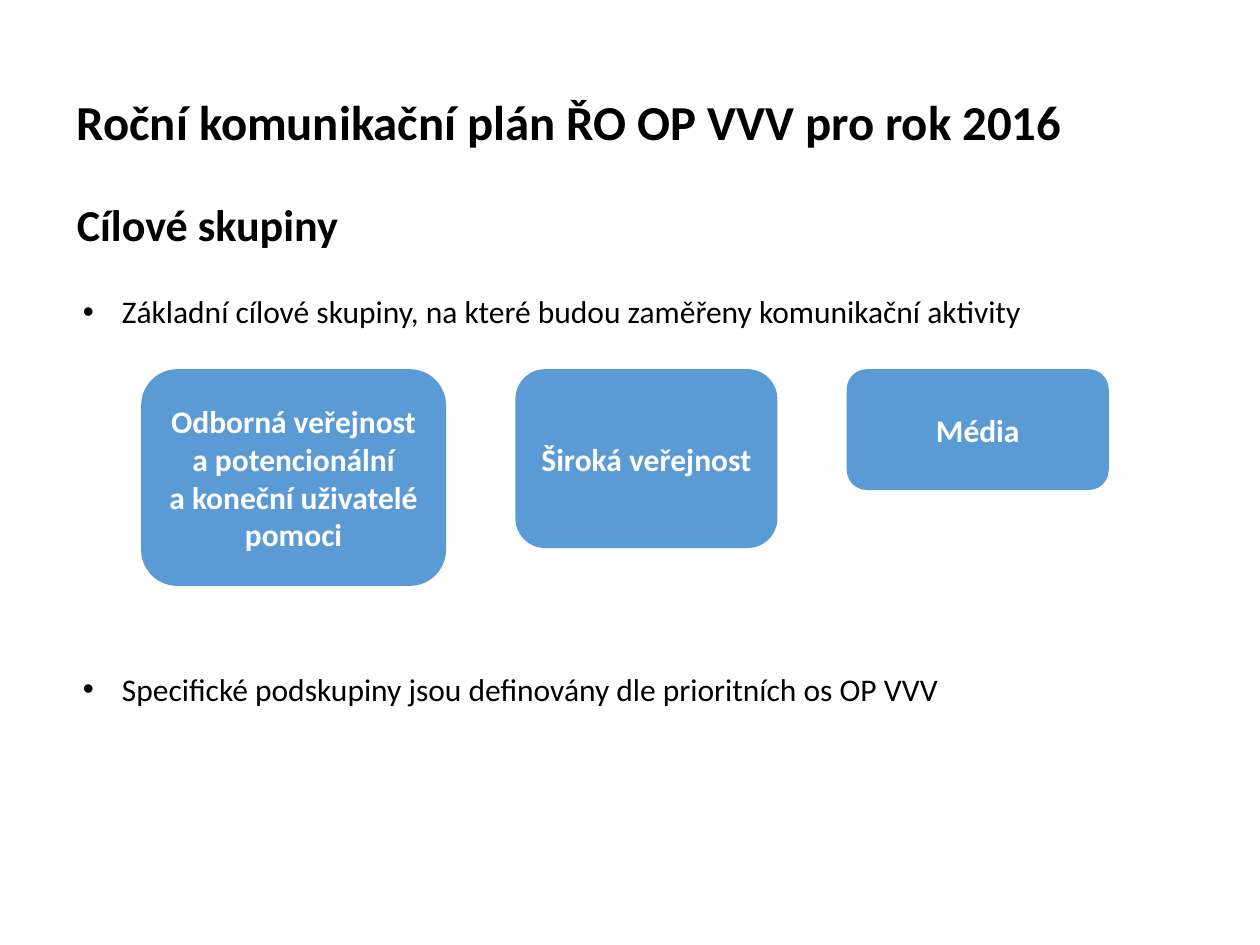
from dataclasses import dataclass

from lxml import etree
from pptx import Presentation
from pptx import util as u
from pptx.dml.color import RGBColor
from pptx.enum import shapes, text
from pptx.oxml import ns


@dataclass(frozen=True)
class Theme:
    font: str = "Calibri"
    ink: str = "000000"
    paper: str = "FFFFFF"
    blue: str = "5B9BD5"
    head: float = 27.9
    sub: float = 25.2
    body: float = 18


THEME = Theme()


def add_run(para, words, size, color, bold=False):
    run = para.add_run()
    run.text = words
    font = run.font
    font.name = THEME.font
    font.size = u.Pt(size)
    font.bold = bold
    font.color.rgb = RGBColor.from_string(color)


def next_para(frame, index):
    return frame.add_paragraph() if index else frame.paragraphs[0]


def place(shape, left, top, width, height):
    shape.left, shape.top = u.Inches(left), u.Inches(top)
    shape.width, shape.height = u.Inches(width), u.Inches(height)


def add_title(slide, lines, gap):
    title = slide.shapes.title
    place(title, 0.51, 1.15, 9, 0.47)
    frame = title.text_frame
    frame.word_wrap = True
    frame.auto_size = text.MSO_AUTO_SIZE.NONE
    frame.vertical_anchor = text.MSO_ANCHOR.MIDDLE
    for i, (words, size) in enumerate(lines):
        para = next_para(frame, i)
        para.alignment = text.PP_ALIGN.LEFT
        para.line_spacing = 0.9
        para.space_before = u.Pt(gap if i else 0)
        add_run(para, words, size, THEME.ink, True)


def set_bullet(para, indent):
    props = para._p.get_or_add_pPr()
    props.set("marL", str(u.Inches(indent)))
    props.set("indent", str(-u.Inches(indent)))
    font = etree.SubElement(props, ns.qn("a:buFont"))
    font.set("typeface", "Arial")
    mark = etree.SubElement(props, ns.qn("a:buChar"))
    mark.set("char", "•")


def add_bullets(slide, items, gap):
    box = slide.shapes.add_textbox(0, 0, 0, 0)
    place(box, 0.56, 1.96, 8.9, 4.34)
    frame = box.text_frame
    frame.word_wrap = True
    frame.margin_top = u.Inches(0.36)
    for i, words in enumerate(items):
        para = next_para(frame, i)
        set_bullet(para, 0.31)
        para.space_before = u.Pt(gap if i else 0)
        add_run(para, words, THEME.body, THEME.ink)


def add_card(slide, lines, left, top, width, height):
    card = slide.shapes.add_shape(
        shapes.MSO_SHAPE.ROUNDED_RECTANGLE,
        u.Inches(left), u.Inches(top), u.Inches(width), u.Inches(height))
    card.shadow.inherit = False
    card.fill.solid()
    card.fill.fore_color.rgb = RGBColor.from_string(THEME.blue)
    card.line.fill.background()
    frame = card.text_frame
    frame.word_wrap = True
    frame.vertical_anchor = text.MSO_ANCHOR.MIDDLE
    para = frame.paragraphs[0]
    para.alignment = text.PP_ALIGN.CENTER
    for i, words in enumerate(lines):
        if i:
            para.add_line_break()
        add_run(para, words, THEME.body, THEME.paper, True)


def main():
    deck = Presentation()
    deck.slide_width, deck.slide_height = u.Inches(10), u.Inches(7.5)
    slide = deck.slides.add_slide(deck.slide_layouts[5])

    # Title and subtitle
    add_title(slide, [
        ("Roční komunikační plán ŘO OP VVV pro rok 2016", THEME.head),
        ("Cílové skupiny", THEME.sub),
    ], gap=30)

    # Bullets above and below the cards
    add_bullets(slide, [
        "Základní cílové skupiny, na které budou zaměřeny komunikační aktivity",
        "Specifické podskupiny jsou definovány dle prioritních os OP VVV",
    ], gap=194)

    # Target groups, top-aligned with equal gaps
    groups = [
        (["Odborná veřejnost a potencionální",
          "a koneční uživatelé pomoci"], 2.42, 1.72),
        (["Široká veřejnost"], 2.08, 1.42),
        (["Média"], 2.08, 0.96),
    ]
    left = 1.12
    for lines, width, height in groups:
        add_card(slide, lines, left, 2.93, width, height)
        left += width + 0.55

    deck.save("out.pptx")


if __name__ == "__main__":
    main()
